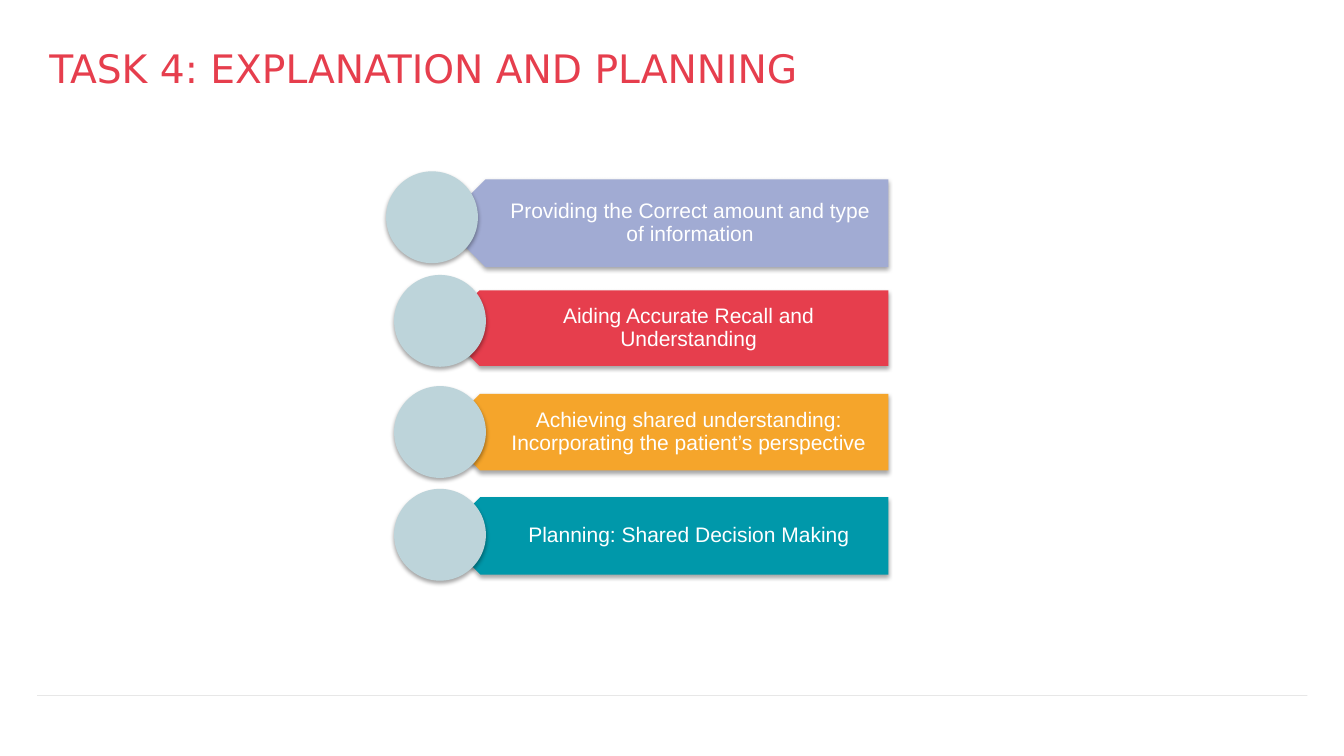
from lxml import etree
from pptx import Presentation
from pptx import util as u
from pptx.dml.color import RGBColor
from pptx.enum import shapes, text
from pptx.oxml.ns import qn

COLORS = {"title": "E63E4D", "circle": "BDD4DA", "text": "FFFFFF", "rule": "262626",
          "lilac": "A1ABD3", "red": "E63E4D", "orange": "F5A52B", "teal": "0098AA"}
BAR_LEFT, BAR_WIDTH, CIRCLE_SIZE = 315.5, 319, 65.6

# label, colour, bar top, bar height, circle left, circle top
STEPS = [
    ("Providing the Correct amount and type of information", "lilac", 128.2, 62.6, 275.8, 122.4),
    ("Aiding Accurate Recall and Understanding", "red", 207.4, 54, 281.5, 196.4),
    ("Achieving shared understanding: Incorporating the patient’s perspective",
     "orange", 281.3, 54.7, 281.5, 275.8),
    ("Planning: Shared Decision Making", "teal", 355, 55.4, 281.5, 349.2),
]


def rgb(name):
    return RGBColor.from_string(COLORS[name])


def add_alpha(color_element, percent):
    etree.SubElement(color_element, qn("a:alpha")).set("val", str(percent * 1000))


class SlideBuilder:
    def __init__(self, prs):
        self.s = prs.slides.add_slide(prs.slide_layouts[5])

    def style_text(self, tf, words, size, font, color, align, anchor, insets):
        tf.word_wrap = True
        tf.auto_size = text.MSO_AUTO_SIZE.NONE
        tf.vertical_anchor = anchor
        tf.margin_left, tf.margin_top, tf.margin_right, tf.margin_bottom = map(u.Pt, insets)
        p = tf.paragraphs[0]
        p.alignment = align
        r = p.add_run()
        r.text = words
        r.font.size, r.font.name = u.Pt(size), font
        r.font.color.rgb = rgb(color)
        return p

    def title(self, words):
        sp = self.s.shapes.title
        sp.left, sp.top, sp.width, sp.height = map(u.Pt, (28, 21.6, 894.5, 51))
        self.style_text(sp.text_frame, words, 28, "DejaVu Sans", "title",
                        text.PP_ALIGN.LEFT, text.MSO_ANCHOR.BOTTOM, (7.2,) * 4)

    def rule(self, left, right, y):
        line = self.s.shapes.add_connector(shapes.MSO_CONNECTOR.STRAIGHT,
                                           *map(u.Pt, (left, y, right, y)))
        line.line.width = u.Pt(0.25)
        line.line.color.rgb = rgb("rule")
        sp_pr = line._element.spPr
        add_alpha(sp_pr.find(".//" + qn("a:srgbClr")), 31)
        etree.SubElement(sp_pr, qn("a:effectLst"))

    def shape(self, group, kind, box, color):
        """Add a borderless filled shape with a soft shadow below it."""
        sp = group.shapes.add_shape(kind, *map(u.Pt, box))
        sp.fill.solid()
        sp.fill.fore_color.rgb = rgb(color)
        sp.line.fill.background()
        sp.shadow.inherit = False
        effects = sp._element.spPr.find(qn("a:effectLst"))
        shadow = etree.SubElement(effects, qn("a:outerShdw"), blurRad=str(u.Pt(3.1)),
                                  dist=str(u.Pt(1.8)), dir="5400000", rotWithShape="0")
        add_alpha(etree.SubElement(shadow, qn("a:srgbClr"), val="000000"), 35)
        return sp

    def label(self, group, box, words):
        sp = group.shapes.add_textbox(*map(u.Pt, box))
        p = self.style_text(sp.text_frame, words, 15, "Arial", "text",
                            text.PP_ALIGN.CENTER, text.MSO_ANCHOR.MIDDLE, (28.8, 4.3, 8.6, 4.3))
        p.line_spacing = 0.9

    def step(self, group, words, color, top, height, circle_left, circle_top):
        """Add one left-pointing bar with its label and the circle over its tip."""
        bar = self.shape(group, shapes.MSO_SHAPE.PENTAGON,
                         (BAR_LEFT, top, BAR_WIDTH, height), color)
        bar.rotation = 180
        indent = height / 4
        self.label(group, (BAR_LEFT + indent, top, BAR_WIDTH - indent, height), words)
        self.shape(group, shapes.MSO_SHAPE.OVAL,
                   (circle_left, circle_top, CIRCLE_SIZE, CIRCLE_SIZE), "circle")


def main():
    prs = Presentation()
    prs.slide_width, prs.slide_height = u.Pt(960), u.Pt(540)
    slide = SlideBuilder(prs)
    slide.rule(26.6, 933.8, 496.8)
    slide.title("TASK 4: EXPLANATION AND PLANNING")
    group = slide.s.shapes.add_group_shape()
    for step in STEPS:
        slide.step(group, *step)
    prs.save("out.pptx")


if __name__ == "__main__":
    main()
